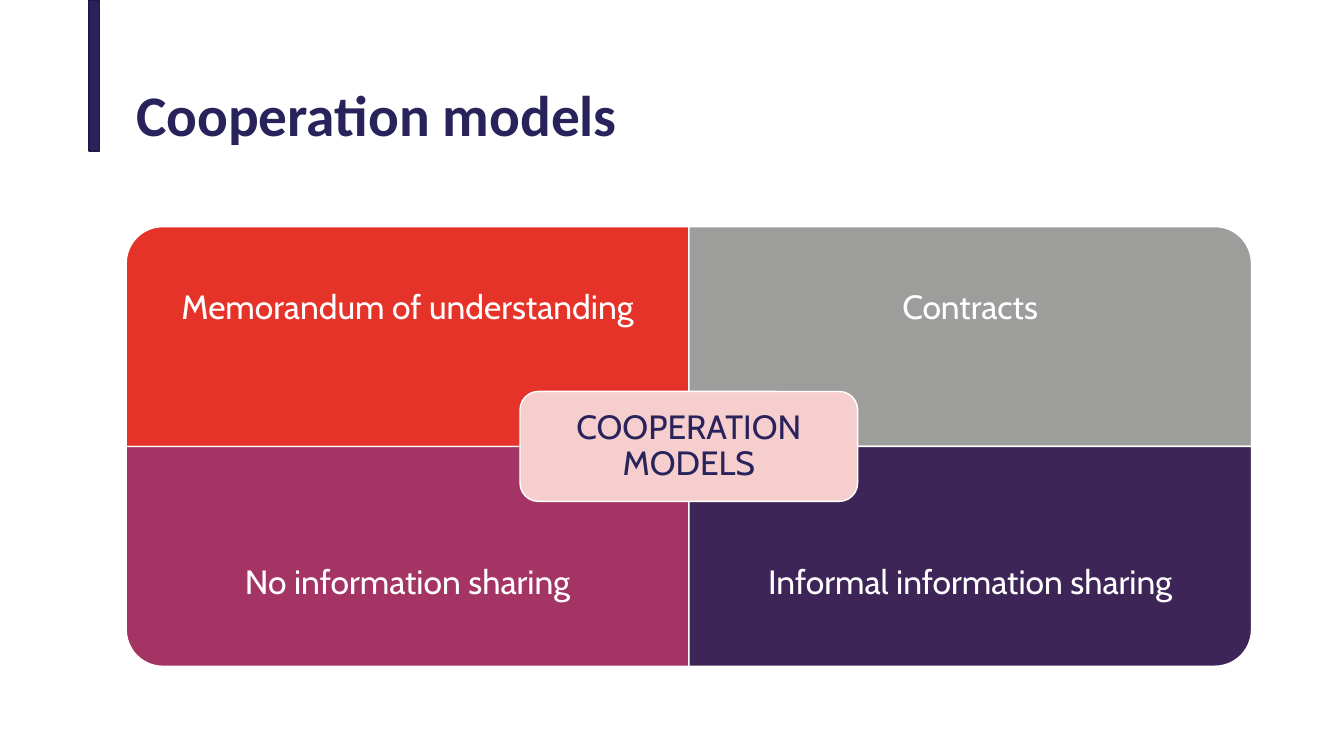
"""Build the cooperation models slide with a four-part matrix."""
from pptx import Presentation
from pptx.dml.color import RGBColor
from pptx.enum.shapes import MSO_SHAPE
from pptx.enum.text import MSO_ANCHOR, PP_ALIGN
from pptx.util import Cm, Pt

TITLE = "Cooperation models"
CENTRE_LABEL = "COOPERATION MODELS"
QUADRANTS = [
    {"label": "Memorandum of understanding", "colour": "red", "column": 0, "row": 0, "rotation": 270},
    {"label": "Contracts", "colour": "grey", "column": 1, "row": 0, "rotation": 0},
    {"label": "No information sharing", "colour": "plum", "column": 0, "row": 1, "rotation": 180},
    {"label": "Informal information sharing", "colour": "purple", "column": 1, "row": 1, "rotation": 90},
]
COLOURS = {
    "navy": "29235C",
    "navy_edge": "1E1A44",
    "white": "FFFFFF",
    "red": "E6332A",
    "grey": "9D9D9C",
    "plum": "A33463",
    "purple": "3E2558",
    "pink": "F5CECD",
}
TITLE_FONT = {"name": "Calibri", "size": Pt(41), "bold": True}
LABEL_FONT = {"name": "Cabin", "size": Pt(24), "bold": False}
TITLE_PARAGRAPH = {"alignment": PP_ALIGN.LEFT}
LABEL_PARAGRAPH = {"alignment": PP_ALIGN.CENTER, "line_spacing": 0.9}

MATRIX_LEFT, MATRIX_TOP = 3.18, 5.71
CELL_WIDTH, CELL_HEIGHT = 14.18, 5.54
LABEL_HEIGHT = CELL_HEIGHT * 0.75
CENTRE_WIDTH, CENTRE_HEIGHT = CELL_WIDTH * 0.6, CELL_HEIGHT / 2
CENTRE_INSET = 0.13


def colour(name):
    return RGBColor.from_string(COLOURS[name])


def add_block(slide, kind, box, fill, edge, rotation=0):
    shape = slide.shapes.add_shape(kind, *map(Cm, box))
    shape.shadow.inherit = False
    shape.rotation = rotation
    shape.fill.solid()
    shape.fill.fore_color.rgb = colour(fill)
    shape.line.color.rgb = colour(edge)
    shape.line.width = Pt(1)


def add_text(slide, text, box, ink, font_format, paragraph_format, margin):
    frame = slide.shapes.add_textbox(*map(Cm, box)).text_frame
    frame.word_wrap = True
    frame.vertical_anchor = MSO_ANCHOR.MIDDLE
    for side in ("left", "right", "top", "bottom"):
        setattr(frame, f"margin_{side}", Cm(margin))
    paragraph = frame.paragraphs[0]
    run = paragraph.add_run()
    run.text = text
    for target, values in ((paragraph, paragraph_format), (run.font, font_format)):
        for name, value in values.items():
            setattr(target, name, value)
    run.font.color.rgb = colour(ink)


def add_quadrant(slide, quadrant):
    left = MATRIX_LEFT + quadrant["column"] * CELL_WIDTH
    top = MATRIX_TOP + quadrant["row"] * CELL_HEIGHT
    width, height = CELL_WIDTH, CELL_HEIGHT
    if quadrant["rotation"] % 180:
        width, height = height, width
    box = (left + (CELL_WIDTH - width) / 2, top + (CELL_HEIGHT - height) / 2, width, height)
    add_block(slide, MSO_SHAPE.ROUND_1_RECTANGLE, box, quadrant["colour"], "white", quadrant["rotation"])
    label_top = top + quadrant["row"] * (CELL_HEIGHT - LABEL_HEIGHT)
    label_box = (left, label_top, CELL_WIDTH, LABEL_HEIGHT)
    add_text(slide, quadrant["label"], label_box, "white", LABEL_FONT, LABEL_PARAGRAPH, 0.48)


def add_centre(slide):
    left = MATRIX_LEFT + CELL_WIDTH - CENTRE_WIDTH / 2
    top = MATRIX_TOP + CELL_HEIGHT - CENTRE_HEIGHT / 2
    box = (left, top, CENTRE_WIDTH, CENTRE_HEIGHT)
    add_block(slide, MSO_SHAPE.ROUNDED_RECTANGLE, box, "pink", "white")
    label_box = (
        left + CENTRE_INSET,
        top + CENTRE_INSET,
        CENTRE_WIDTH - 2 * CENTRE_INSET,
        CENTRE_HEIGHT - 2 * CENTRE_INSET,
    )
    add_text(slide, CENTRE_LABEL, label_box, "navy", LABEL_FONT, LABEL_PARAGRAPH, 0.25)


def main():
    presentation = Presentation()
    presentation.slide_width, presentation.slide_height = Cm(33.87), Cm(19.05)
    slide = presentation.slides.add_slide(presentation.slide_layouts[6])
    add_block(slide, MSO_SHAPE.RECTANGLE, (2.24, 0, 0.27, 3.81), "navy", "navy_edge")
    add_text(slide, TITLE, (3.18, 1.02, 28.35, 3.68), "navy", TITLE_FONT, TITLE_PARAGRAPH, 0.25)
    for quadrant in QUADRANTS:
        add_quadrant(slide, quadrant)
    add_centre(slide)
    presentation.save("out.pptx")


if __name__ == "__main__":
    main()
